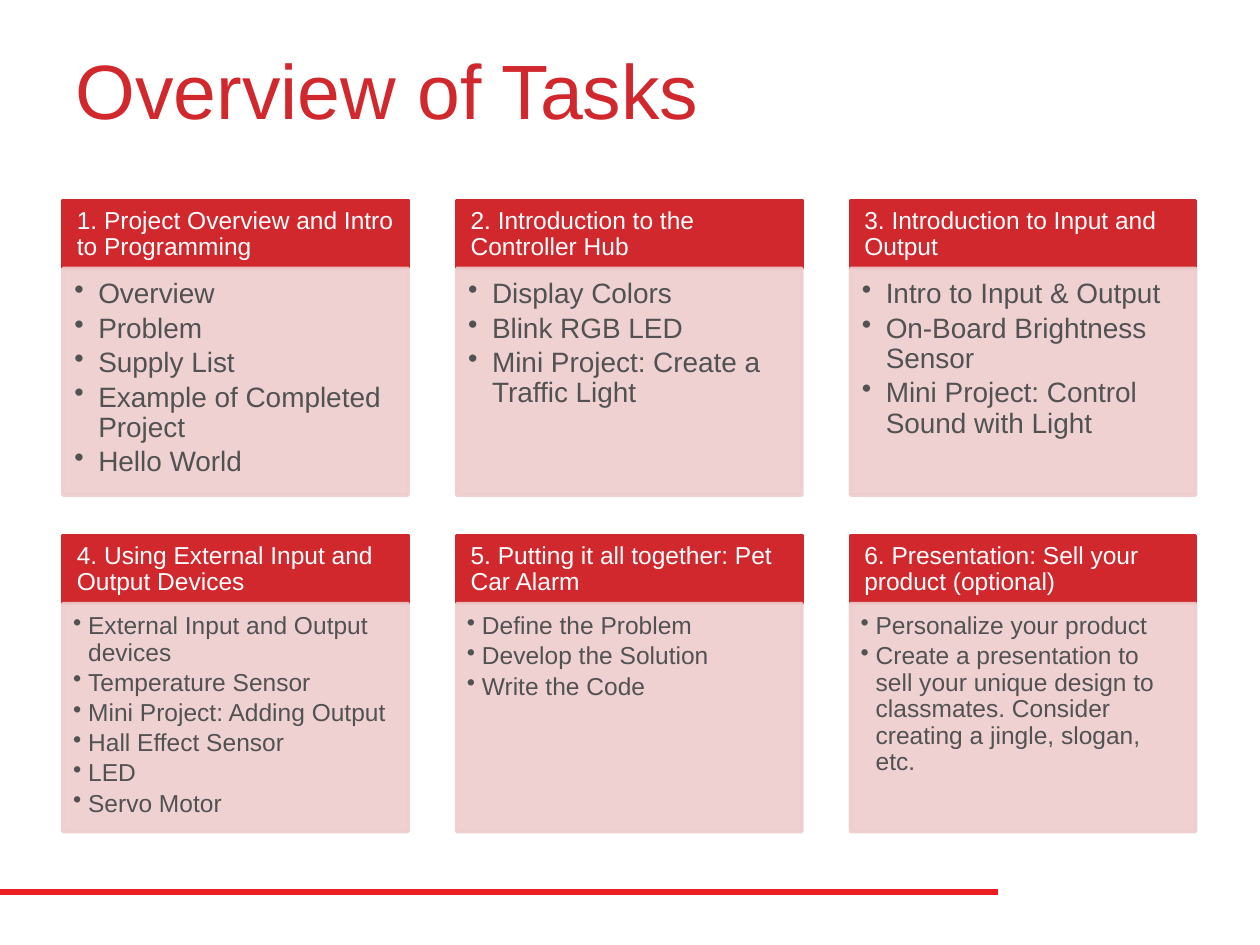
import pptx
import pptx.dml.color
import pptx.enum.shapes
import pptx.enum.text
import pptx.oxml.ns
import pptx.util
from lxml import etree

Inches = pptx.util.Inches
Pt = pptx.util.Pt
RGBColor = pptx.dml.color.RGBColor
qn = pptx.oxml.ns.qn
ANCHOR = pptx.enum.text.MSO_ANCHOR

RED = RGBColor(0xD1, 0x28, 0x2E)
RULE_RED = RGBColor(0xED, 0x1D, 0x24)
PINK = RGBColor(0xEE, 0xCD, 0xCD)
GRAY = RGBColor(0x52, 0x52, 0x52)
WHITE = RGBColor(0xFF, 0xFF, 0xFF)

LEFT, COLUMN_STEP, CARD_WIDTH = 0.5, 3.125, 2.74
HEADER_HEIGHT = 0.54

HEADER_INSETS = (0.11, 0.06, 0.11, 0.06)
ROWS = [
    {
        "top": 1.59, "body_height": 1.8, "size": 16, "indent": 0.19,
        "insets": (0.09, 0.09, 0.12, 0.14),
        "cards": [
            ("1. Project Overview and Intro to Programming",
             ["Overview", "Problem", "Supply List",
              "Example of Completed Project", "Hello World"]),
            ("2. Introduction to the \nController Hub",
             ["Display Colors", "Blink RGB LED",
              "Mini Project: Create a Traffic Light"]),
            ("3. Introduction to Input and Output",
             ["Intro to Input & Output", "On-Board Brightness Sensor",
              "Mini Project: Control Sound with Light"]),
        ],
    },
    {
        "top": 4.25, "body_height": 1.81, "size": 14, "indent": 0.12,
        "insets": (0.08, 0.08, 0.11, 0.12),
        "cards": [
            ("4. Using External Input and Output Devices",
             ["External Input and Output devices", "Temperature Sensor",
              "Mini Project: Adding Output", "Hall Effect Sensor", "LED",
              "Servo Motor"]),
            ("5. Putting it all together: Pet Car Alarm",
             ["Define the Problem", "Develop the Solution", "Write the Code"]),
            ("6. Presentation: Sell your product (optional)",
             ["Personalize your product",
              "Create a presentation to sell your unique design to classmates. "
              "Consider creating a jingle, slogan, etc."]),
        ],
    },
]


def set_text(p, text, size, color):
    p.text = text
    p.alignment = pptx.enum.text.PP_ALIGN.LEFT
    for r in p.runs:
        for name, value in {"name": "Arial", "size": Pt(size)}.items():
            setattr(r.font, name, value)
        r.font.color.rgb = color


def set_frame(tf, insets, anchor):
    left, top, right, bottom = map(Inches, insets)
    frame = {"word_wrap": True, "vertical_anchor": anchor,
             "margin_left": left, "margin_top": top,
             "margin_right": right, "margin_bottom": bottom}
    for name, value in frame.items():
        setattr(tf, name, value)


def add_bullet(p, indent):
    pPr = p._p.get_or_add_pPr()
    pPr.set("marL", str(Inches(indent)))
    pPr.set("indent", str(-Inches(indent)))
    etree.SubElement(pPr, qn("a:buChar")).set("char", "•")


def add_box(s, left, top, height, color, opacity=100):
    box = s.shapes.add_shape(pptx.enum.shapes.MSO_SHAPE.RECTANGLE, Inches(left),
                             Inches(top), Inches(CARD_WIDTH), Inches(height))
    box.shadow.inherit = False
    box.line.width = Pt(2)
    for fill in (box.fill, box.line.fill):
        fill.solid()
        fill.fore_color.rgb = color
    if opacity < 100:
        for clr in box._element.spPr.iter(qn("a:srgbClr")):
            etree.SubElement(clr, qn("a:alpha")).set("val", str(opacity * 1000))
    return box


def add_header(s, left, top, text):
    tf = add_box(s, left, top, HEADER_HEIGHT, RED).text_frame
    set_frame(tf, HEADER_INSETS, ANCHOR.MIDDLE)
    p = tf.paragraphs[0]
    set_text(p, text, 14, WHITE)
    p.line_spacing = 0.9


def add_task_list(s, left, row, tasks):
    tf = add_box(s, left, row["top"] + HEADER_HEIGHT, row["body_height"],
                 PINK, 90).text_frame
    set_frame(tf, row["insets"], ANCHOR.TOP)
    for i, task in enumerate(tasks):
        p = tf.add_paragraph() if i else tf.paragraphs[0]
        add_bullet(p, row["indent"])
        set_text(p, task, row["size"], GRAY)
        p.level = 1
        p.line_spacing = 0.9
        p.space_after = Pt(0.15 * row["size"])


def add_title(s, text):
    tf = s.shapes.add_textbox(Inches(0.5), Inches(0.08), Inches(9),
                              Inches(1.25)).text_frame
    set_frame(tf, (0.1, 0.05, 0.1, 0.05), ANCHOR.MIDDLE)
    set_text(tf.paragraphs[0], text, 44, RED)


def add_rule(s):
    rule = s.shapes.add_connector(pptx.enum.shapes.MSO_CONNECTOR.STRAIGHT, 0,
                                  Inches(7.08), Inches(7.92), Inches(7.08))
    rule.line.color.rgb = RULE_RED
    rule.line.width = Pt(3)
    etree.SubElement(rule._element.spPr, qn("a:effectLst"))


def main():
    prs = pptx.Presentation()
    prs.slide_width, prs.slide_height = Inches(10), Inches(7.5)
    s = prs.slides.add_slide(prs.slide_layouts[6])
    add_rule(s)
    add_title(s, "Overview of Tasks")
    for row in ROWS:
        for column, (heading, tasks) in enumerate(row["cards"]):
            left = LEFT + column * COLUMN_STEP
            add_header(s, left, row["top"], heading)
            add_task_list(s, left, row, tasks)
    prs.save("out.pptx")


if __name__ == "__main__":
    main()
